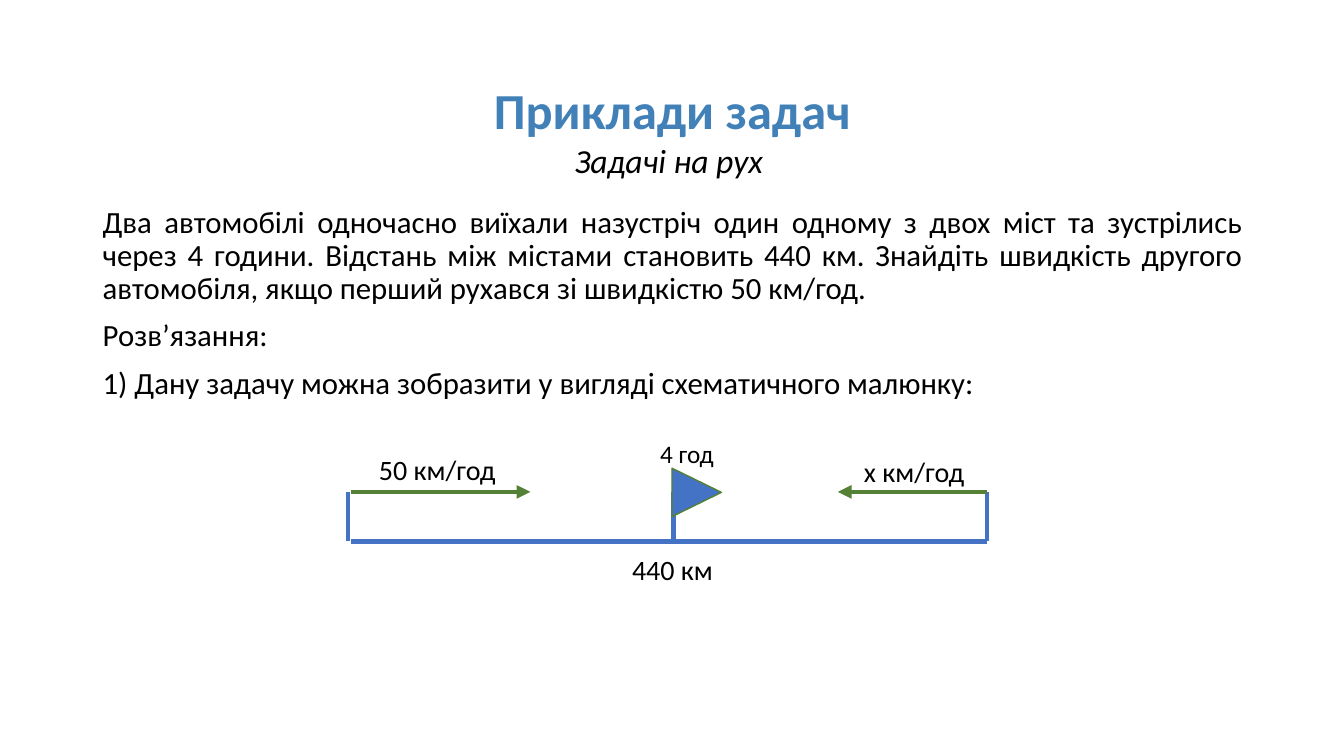
from lxml import etree
from pptx import Presentation
from pptx.dml.color import RGBColor
from pptx.enum.shapes import MSO_CONNECTOR, MSO_SHAPE
from pptx.enum.text import MSO_ANCHOR, PP_ALIGN
from pptx.oxml.ns import qn
from pptx.util import Inches, Pt

BLACK, BLUE, GREEN, TITLE_BLUE = "000000", "4472C4", "548135", "4280B8"


def color(value):
    return RGBColor.from_string(value)


def style(para, size, value=BLACK):
    para.font.name = "Calibri"
    para.font.size = Pt(size)
    para.font.color.rgb = color(value)


deck = Presentation()
deck.slide_width, deck.slide_height = Inches(13.33), Inches(7.5)
page = deck.slides.add_slide(deck.slide_layouts[5])

title = page.shapes.title
title.left, title.top = Inches(0.92), Inches(0.4)
title.width, title.height = Inches(11.5), Inches(1.45)
title.text_frame.text = "Приклади задач"
title.text_frame.vertical_anchor = MSO_ANCHOR.MIDDLE
heading = title.text_frame.paragraphs[0]
heading.alignment = PP_ALIGN.CENTER
heading.line_spacing = 0.9
style(heading, 36, TITLE_BLUE)
heading.font.bold = True

body = page.shapes.add_textbox(Inches(0.92), Inches(2), Inches(11.5), Inches(4.76))
body.text_frame.word_wrap = True
body.text_frame.text = "\n".join([
    "Два автомобілі одночасно виїхали назустріч один одному з двох міст та зустрілись "
    "через 4 години. Відстань між містами становить 440 км. Знайдіть швидкість другого "
    "автомобіля, якщо перший рухався зі швидкістю 50 км/год.",
    "Розв’язання:",
    "1) Дану задачу можна зобразити у вигляді схематичного малюнку:",
])
for index, para in enumerate(body.text_frame.paragraphs):
    para.line_spacing = 0.9
    para.space_before = Pt(10 if index else 0)
    para.alignment = PP_ALIGN.LEFT if index else PP_ALIGN.JUSTIFY
    style(para, 22)

road_y, arrow_y = 5.37, 4.88
left_town, meeting, right_town = 3.45, 6.68, 9.79
lines = [
    (3.48, road_y, right_town, road_y, BLUE, 3.25, False),
    (left_town, arrow_y, left_town, road_y, BLUE, 3, False),
    (right_town, arrow_y, right_town, road_y, BLUE, 3.25, False),
    (meeting, arrow_y, meeting, road_y, BLUE, 3, False),
    (3.48, arrow_y, 5.26, arrow_y, GREEN, 3.25, True),
    (right_town, arrow_y, 8.31, arrow_y, GREEN, 3.25, True),
]
for x1, y1, x2, y2, value, width, has_arrow in lines:
    line = page.shapes.add_connector(
        MSO_CONNECTOR.STRAIGHT, Inches(x1), Inches(y1), Inches(x2), Inches(y2))
    line.line.color.rgb = color(value)
    line.line.width = Pt(width)
    if has_arrow:
        etree.SubElement(line.line._get_or_add_ln(), qn("a:tailEnd"), type="triangle")
    etree.SubElement(line._element.spPr, qn("a:effectLst"))

flag = page.shapes.add_shape(
    MSO_SHAPE.ISOSCELES_TRIANGLE, Inches(6.67), Inches(4.64), Inches(0.48), Inches(0.49))
flag.rotation = 90
flag.shadow.inherit = False
flag.fill.solid()
flag.fill.fore_color.rgb = color(BLUE)
flag.line.color.rgb = color(GREEN)
flag.line.width = Pt(1)

labels = [
    ("Задачі на рух", 5.6, 1.34, 2.07, 0.5, 24),
    ("50 км/год", 3.66, 4.44, 1.37, 0.44, 20),
    ("х км/год", 8.47, 4.46, 1.2, 0.44, 20),
    ("440 км", 6.17, 5.43, 1.01, 0.44, 20),
    ("4 год", 6.45, 4.3, 0.74, 0.4, 18),
]
for text, left, top, width, height, size in labels:
    box = page.shapes.add_textbox(Inches(left), Inches(top), Inches(width), Inches(height))
    box.text_frame.text = text
    box.text_frame.word_wrap = False
    para = box.text_frame.paragraphs[0]
    style(para, size)
    para.font.italic = text == "Задачі на рух"

deck.save("out.pptx")
